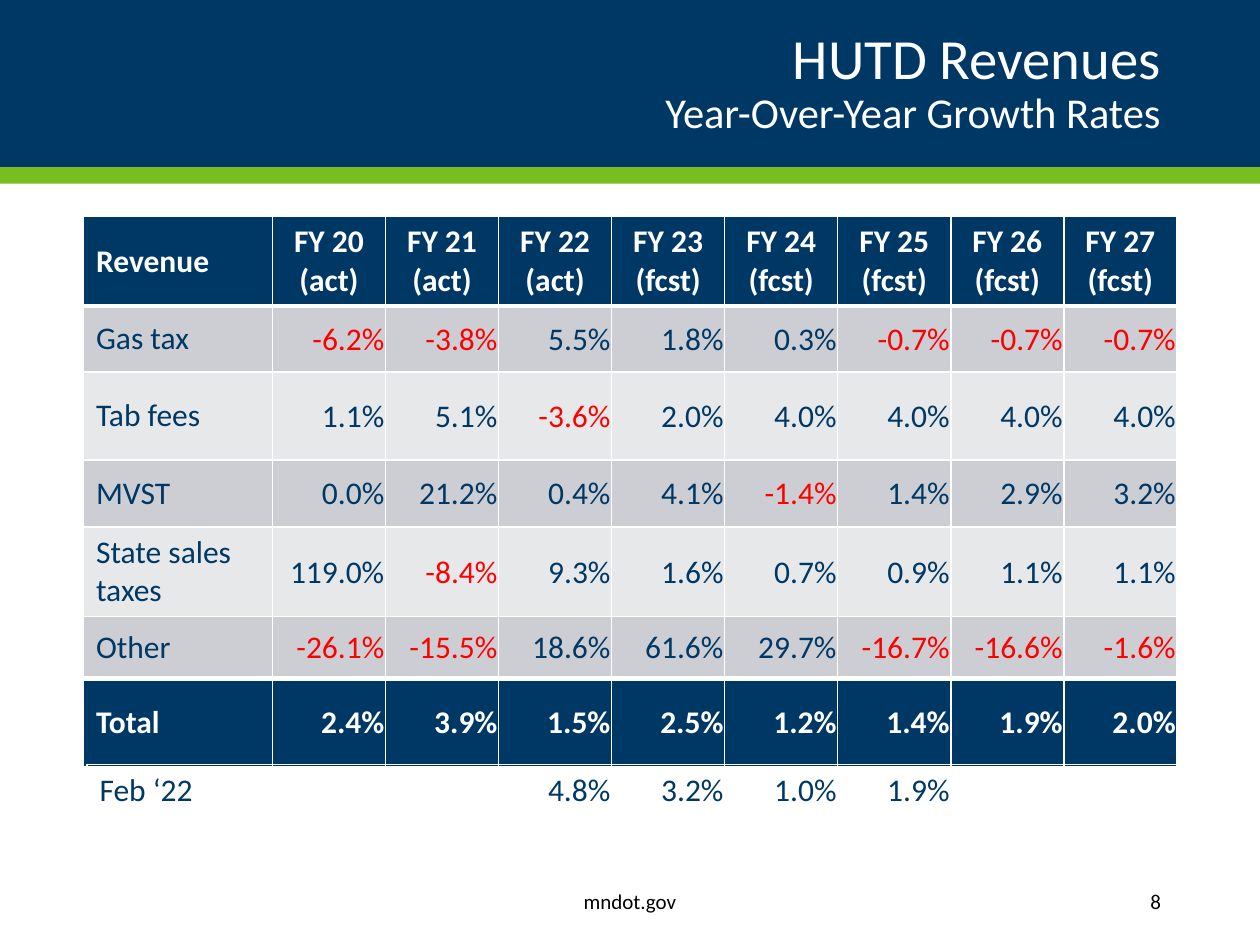
from lxml import etree
from pptx import Presentation
from pptx.dml.color import RGBColor
from pptx.enum.shapes import MSO_SHAPE
from pptx.enum.text import MSO_ANCHOR, MSO_AUTO_SIZE, PP_ALIGN
from pptx.oxml.ns import qn
from pptx.util import Pt

RECT = MSO_SHAPE.RECTANGLE
MIDDLE, TOP = MSO_ANCHOR.MIDDLE, MSO_ANCHOR.TOP
LEFT, CENTER, RIGHT = PP_ALIGN.LEFT, PP_ALIGN.CENTER, PP_ALIGN.RIGHT
NO_FIT = MSO_AUTO_SIZE.NONE
FONT = "Calibri"
NAVY, GREEN, WHITE, RED, BLACK = "003865", "78BE21", "FFFFFF", "FF0000", "000000"
BANDS = ["CCCED3", "E7E8EA"]

YEARS = ["FY 20\n(act)", "FY 21\n(act)", "FY 22\n(act)", "FY 23\n(fcst)",
         "FY 24\n(fcst)", "FY 25\n(fcst)", "FY 26\n(fcst)", "FY 27\n(fcst)"]
RATES = [
    ["Gas tax", "-6.2%", "-3.8%", "5.5%", "1.8%", "0.3%", "-0.7%", "-0.7%", "-0.7%"],
    ["Tab fees", "1.1%", "5.1%", "-3.6%", "2.0%", "4.0%", "4.0%", "4.0%", "4.0%"],
    ["MVST", "0.0%", "21.2%", "0.4%", "4.1%", "-1.4%", "1.4%", "2.9%", "3.2%"],
    ["State sales taxes", "119.0%", "-8.4%", "9.3%", "1.6%", "0.7%", "0.9%", "1.1%", "1.1%"],
    ["Other", "-26.1%", "-15.5%", "18.6%", "61.6%", "29.7%", "-16.7%", "-16.6%", "-1.6%"],
]
TOTAL = ["Total", "2.4%", "3.9%", "1.5%", "2.5%", "1.2%", "1.4%", "1.9%", "2.0%"]
PRIOR = ["Feb ‘22", "", "", "4.8%", "3.2%", "1.0%", "1.9%", "", ""]


def rgb(code):
    """Turn a hex string into a colour."""
    return RGBColor.from_string(code)


def style(para, size, color, align=LEFT, bold=False):
    """Format a whole paragraph."""
    para.alignment = align
    font = para.font
    font.name, font.size, font.bold = FONT, Pt(size), bold
    font.color.rgb = rgb(color)


def add_bar(slide, box, color):
    """Draw a plain filled bar."""
    bar = slide.shapes.add_shape(RECT, *map(Pt, box))
    bar.shadow.inherit = False
    bar.fill.solid()
    bar.fill.fore_color.rgb = rgb(color)
    bar.line.fill.background()


def add_banner(slide, box, title, sub):
    """Draw the banner with its stripe and the slide title."""
    x, y, w, h = box
    stripe = 9.5
    add_bar(slide, (x, y, w, h - stripe), NAVY)
    add_bar(slide, (x, y + h - stripe, w, stripe), GREEN)
    head = slide.shapes.title
    tree = slide.shapes._spTree
    tree.remove(head._element)
    tree.append(head._element)
    head.left, head.top, head.width, head.height = map(Pt, (x + 49.5, y + 12, w - 99, 72))
    frame = head.text_frame
    frame.word_wrap, frame.auto_size = True, NO_FIT
    frame.vertical_anchor = MIDDLE
    para = frame.paragraphs[0]
    style(para, 32.4, WHITE, RIGHT)
    para.line_spacing = 0.9
    para.add_run().text = title
    para.add_line_break()
    run = para.add_run()
    run.text = sub
    run.font.size = Pt(24.3)


def add_edges(cell, top=1, base=1):
    """Give a cell white borders."""
    props = cell._tc.get_or_add_tcPr()
    for side, width in (("L", 1), ("R", 1), ("T", top), ("B", base)):
        line = etree.SubElement(props, qn(f"a:ln{side}"), w=str(Pt(width)))
        fill = etree.SubElement(line, qn("a:solidFill"))
        etree.SubElement(fill, qn("a:srgbClr"), val=WHITE)


def fill_cell(cell, text, color, fill=None, align=LEFT, bold=False, anchor=MIDDLE):
    """Write a cell and set its fill and margins."""
    cell.text = text
    cell.vertical_anchor = anchor
    if align == RIGHT:
        cell.margin_left = cell.margin_right = cell.margin_top = Pt(0.7)
        cell.margin_bottom = Pt(0)
    for para in cell.text_frame.paragraphs:
        style(para, 18, color, align, bold)
    if fill:
        cell.fill.solid()
        cell.fill.fore_color.rgb = rgb(fill)
    else:
        cell.fill.background()


def add_grid(slide, box, first, heights):
    """Add a bare table with a wide first column."""
    x, y, w, h = box
    count = len(YEARS) + 1
    grid = slide.shapes.add_table(len(heights), count, *map(Pt, box)).table
    grid.first_row = grid.horz_banding = False
    for i, col in enumerate(grid.columns):
        col.width = Pt((w - first) / (count - 1) if i else first)
    for row, height in zip(grid.rows, heights):
        row.height = Pt(height)
    return grid


def add_rates(slide, box):
    """Add the main table of growth rates."""
    grid = add_grid(slide, box, 108, [50.4, 37.6, 50.4, 38.2, 50.4, 35.4, 50.4])
    rows = [["Revenue"] + YEARS] + RATES + [TOTAL]
    last = len(rows) - 1
    for r, row in enumerate(rows):
        strong = r in (0, last)
        for c, text in enumerate(row):
            cell = grid.cell(r, c)
            add_edges(cell, 3 if r in (1, last) else 1, 3 if r in (0, last - 1) else 1)
            align = LEFT if c == 0 else CENTER if r == 0 else RIGHT
            color = WHITE if strong else RED if text.startswith("-") else NAVY
            fill = NAVY if strong else BANDS[(r - 1) % 2]
            fill_cell(cell, text, color, fill, align, strong)


def add_prior(slide, box):
    """Add the one-row table of the prior forecast."""
    grid = add_grid(slide, box, 106, [box[3]])
    for c, text in enumerate(PRIOR):
        cell = grid.cell(0, c)
        add_edges(cell)
        fill_cell(cell, text, NAVY, None, RIGHT if c else LEFT, False, MIDDLE if c else TOP)


def add_note(slide, box, text, align):
    """Add a line of footer text."""
    frame = slide.shapes.add_textbox(*map(Pt, box)).text_frame
    frame.word_wrap = True
    frame.vertical_anchor = MIDDLE
    frame.text = text
    style(frame.paragraphs[0], 12, BLACK, align)


def add_footer(slide, box):
    """Add the web address and the page number."""
    x, y, w, h = box
    add_note(slide, (x + (w - 330) / 2, y, 330, h), "mndot.gov", CENTER)
    add_note(slide, (x + w - 86.4, y, 86.4, h), "8", RIGHT)


def main():
    """Build the slide and save it."""
    deck = Presentation()
    deck.slide_width, deck.slide_height = Pt(720), Pt(540)
    slide = deck.slides.add_slide(deck.slide_layouts[5])
    add_banner(slide, (0, 0, 720, 105), "HUTD Revenues", "Year-Over-Year Growth Rates")
    add_rates(slide, (47.7, 123.8, 625, 312.8))
    add_footer(slide, (49.5, 500.4, 621, 29))
    add_prior(slide, (49.7, 437, 623, 29.5))
    deck.save("out.pptx")


if __name__ == "__main__":
    main()
